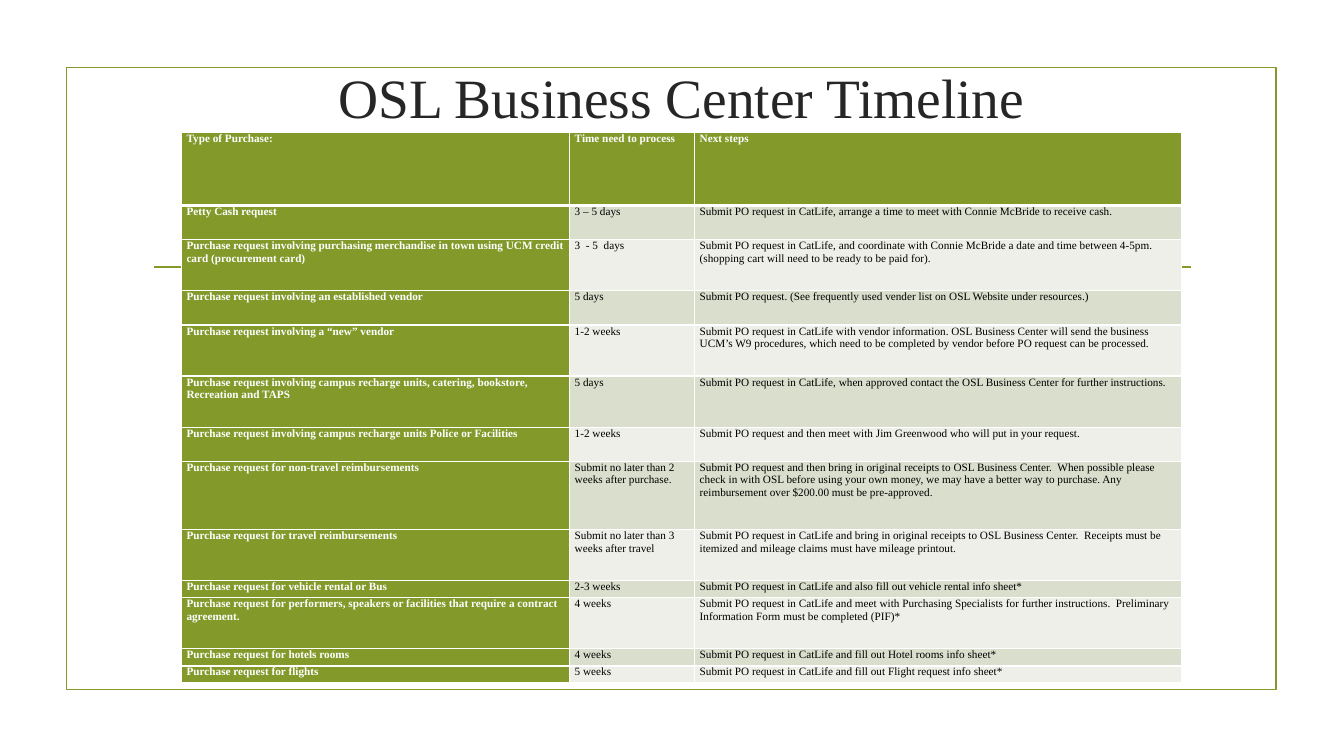
from lxml.etree import SubElement
from pptx import Presentation
from pptx.dml.color import RGBColor
from pptx.enum.shapes import MSO_CONNECTOR as Connector, MSO_SHAPE as Shape
from pptx.enum.text import MSO_ANCHOR as Anchor, PP_ALIGN as Align
from pptx.oxml.ns import qn
from pptx.util import Inches, Pt

OLIVE = RGBColor(0x83, 0x99, 0x2A)
SAGE = RGBColor(0xD9, 0xDE, 0xCD)
PALE_SAGE = RGBColor(0xED, 0xEF, 0xE8)
WHITE = RGBColor(0xFF, 0xFF, 0xFF)
BLACK = RGBColor(0, 0, 0)
CHARCOAL = RGBColor(0x26, 0x26, 0x26)

FONT = "Times New Roman"
COLUMN_WIDTHS = (3.85, 1.24, 4.83)
HEADER_HEIGHT = 0.73
BODY_HEIGHT = 4.74
HEADINGS = ("Type of Purchase:", "Time need to process", "Next steps")

# Height in line units, type of purchase, time needed, next steps
PURCHASES = [
    (2, "Petty Cash request", "3 – 5 days",
     "Submit PO request in CatLife, arrange a time to meet with Connie McBride to receive cash."),
    (3, "Purchase request involving purchasing merchandise in town using UCM credit card "
     "(procurement card)", "3  - 5  days",
     "Submit PO request in CatLife, and coordinate with Connie McBride a date and time between "
     "4-5pm. (shopping cart will need to be ready to be paid for)."),
    (2, "Purchase request involving an established vendor", "5 days",
     "Submit PO request. (See frequently used vender list on OSL Website under resources.)"),
    (3, "Purchase request involving a “new” vendor", "1-2 weeks",
     "Submit PO request in CatLife with vendor information. OSL Business Center will send the "
     "business UCM’s W9 procedures, which need to be completed by vendor before PO request can "
     "be processed."),
    (3, "Purchase request involving campus recharge units, catering, bookstore, Recreation "
     "and TAPS", "5 days",
     "Submit PO request in CatLife, when approved contact the OSL Business Center for further "
     "instructions."),
    (2, "Purchase request involving campus recharge units Police or Facilities", "1-2 weeks",
     "Submit PO request and then meet with Jim Greenwood who will put in your request."),
    (4, "Purchase request for non-travel reimbursements",
     "Submit no later than 2 weeks after purchase.",
     "Submit PO request and then bring in original receipts to OSL Business Center.  When "
     "possible please check in with OSL before using your own money, we may have a better way "
     "to purchase. Any reimbursement over $200.00 must be pre-approved."),
    (3, "Purchase request for travel reimbursements",
     "Submit no later than 3 weeks after travel",
     "Submit PO request in CatLife and bring in original receipts to OSL Business Center.  "
     "Receipts must be itemized and mileage claims must have mileage printout."),
    (1, "Purchase request for vehicle rental or Bus", "2-3 weeks",
     "Submit PO request in CatLife and also fill out vehicle rental info sheet*"),
    (3, "Purchase request for performers, speakers or facilities that require a contract "
     "agreement.", "4 weeks",
     "Submit PO request in CatLife and meet with Purchasing Specialists for further "
     "instructions.  Preliminary Information Form must be completed (PIF)*"),
    (1, "Purchase request for hotels rooms", "4 weeks",
     "Submit PO request in CatLife and fill out Hotel rooms info sheet*"),
    (1, "Purchase request for flights", "5 weeks",
     "Submit PO request in CatLife and fill out Flight request info sheet*"),
]


def set_all(target, values):
    for name, value in values.items():
        setattr(target, name, value)


def write_text(frame, text, size, color, bold=False):
    para = frame.paragraphs[0]
    span = para.add_run()
    span.text = text
    set_all(span.font, {"name": FONT, "size": Pt(size), "bold": bold})
    span.font.color.rgb = color
    return para


def style_line(line):
    line.color.rgb = OLIVE
    line.width = Pt(1.25)


def add_frame(page):
    frame = page.shapes.add_shape(Shape.RECTANGLE, Inches(0.66), Inches(0.67),
                                  Inches(12), Inches(6.17))
    frame.shadow.inherit = False
    frame.fill.background()
    style_line(frame.line)


def add_rule(page):
    rule = page.shapes.add_connector(Connector.STRAIGHT, Inches(1.53), Inches(2.65),
                                     Inches(11.81), Inches(2.65))
    style_line(rule.line)
    SubElement(rule._element.spPr, qn("a:effectLst"))


def add_title(page):
    box = page.shapes.add_textbox(Inches(1.61), Inches(0.68), Inches(10.3), Inches(0.56))
    set_all(box.text_frame, {
        "word_wrap": True, "vertical_anchor": Anchor.MIDDLE,
        "margin_top": 0, "margin_bottom": 0})
    para = write_text(box.text_frame, "OSL Business Center Timeline", 39.6, CHARCOAL)
    para.alignment = Align.CENTER


def add_borders(cell, top, bottom):
    properties = cell._tc.get_or_add_tcPr()
    for side, width in (("L", 1), ("R", 1), ("T", top), ("B", bottom)):
        border = SubElement(properties, qn(f"a:ln{side}"), w=str(Pt(width)))
        fill = SubElement(border, qn("a:solidFill"))
        SubElement(fill, qn("a:srgbClr"), val=str(WHITE))


def fill_cell(cell, text, row, column):
    strong = row == 0 or column == 0
    set_all(cell, {"margin_left": Inches(0.05), "margin_right": Inches(0.05),
                   "margin_top": 0, "margin_bottom": 0, "vertical_anchor": Anchor.TOP})
    # Borders come before the fill in the cell properties
    add_borders(cell, 3 if row == 1 else 1, 3 if row == 0 else 1)
    cell.fill.solid()
    cell.fill.fore_color.rgb = OLIVE if strong else SAGE if row % 2 else PALE_SAGE
    write_text(cell.text_frame, text, 8, WHITE if strong else BLACK, strong)


def add_timeline(page):
    rows = [HEADINGS] + [purchase[1:] for purchase in PURCHASES]
    line_height = BODY_HEIGHT / sum(purchase[0] for purchase in PURCHASES)
    heights = [HEADER_HEIGHT] + [purchase[0] * line_height for purchase in PURCHASES]
    table = page.shapes.add_table(len(rows), len(HEADINGS), Inches(1.8), Inches(1.31),
                                  Inches(sum(COLUMN_WIDTHS)), Inches(sum(heights))).table
    for column, width in zip(table.columns, COLUMN_WIDTHS):
        column.width = Inches(width)
    for row, (texts, height) in enumerate(zip(rows, heights)):
        table.rows[row].height = Inches(height)
        for column, text in enumerate(texts):
            fill_cell(table.cell(row, column), text, row, column)


def main():
    deck = Presentation()
    set_all(deck, {"slide_width": Inches(13.33), "slide_height": Inches(7.5)})
    page = deck.slides.add_slide(deck.slide_layouts[6])
    # Backdrop
    add_frame(page)
    add_rule(page)
    # Content
    add_title(page)
    add_timeline(page)
    deck.save("out.pptx")


if __name__ == "__main__":
    main()
